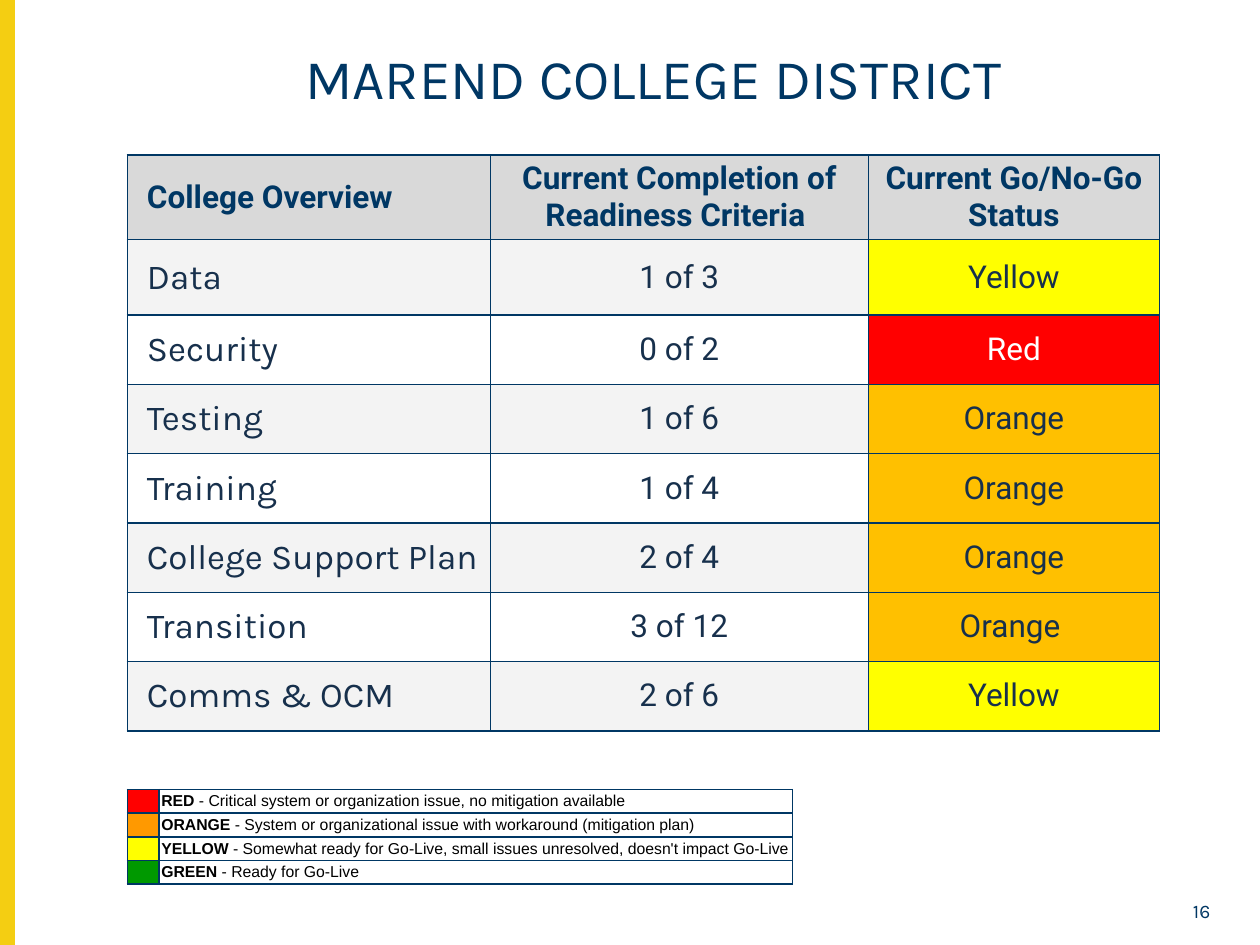
import pptx
import pptx.dml.color
import pptx.enum.shapes
import pptx.enum.text
import pptx.oxml
import pptx.oxml.ns
import pptx.util

Pt = pptx.util.Pt
ALIGN = pptx.enum.text.PP_ALIGN
MIDDLE = pptx.enum.text.MSO_ANCHOR.MIDDLE

NAVY = "003764"
INK = "17304C"
WHITE = "FFFFFF"
BAR_GOLD = "F4CE12"
HEADER_GREY = "D9D9D9"
BAND_GREY = "F3F3F3"
LEFT = 72.8

HEADINGS = (
    "College Overview",
    "Current Completion of Readiness Criteria ",
    "Current Go/No-Go Status",
)
STATUS_FILLS = {"Yellow": "FFFF00", "Red": "FF0000", "Orange": "FFC000"}
READINESS = (
    ("Data", "1 of 3", "Yellow"),
    ("Security", "0 of 2", "Red"),
    ("Testing", "1 of 6", "Orange"),
    ("Training", "1 of 4", "Orange"),
    ("College Support Plan", "2 of 4", "Orange"),
    ("Transition", "3 of 12", "Orange "),
    ("Comms & OCM", "2 of 6", "Yellow"),
)
LEGEND = (
    ("RED", "FF0000", "Critical system or organization issue, no mitigation available"),
    ("ORANGE", "FF9900", "System or organizational issue with workaround (mitigation plan)"),
    ("YELLOW", "FFFF00",
     "Somewhat ready for Go-Live, small issues unresolved, doesn't impact Go-Live"),
    ("GREEN", "009900", "Ready for Go-Live"),
)


def color(hex_string):
    return pptx.dml.color.RGBColor.from_string(hex_string)


def add_text(paragraph, text, *, size, font, fill, bold=False, align=None, indent=0):
    """Append a formatted run; indent is the first-line indent in points."""
    run = paragraph.add_run()
    run.text = text
    run.font.size = Pt(size)
    run.font.name = font
    run.font.bold = bold
    run.font.color.rgb = color(fill)
    if align is not None:
        paragraph.alignment = align
    if indent:
        paragraph._p.get_or_add_pPr().set("indent", str(Pt(indent)))


def add_text_box(slide, left, top, width, height, text, line_spacing=None, **text_format):
    frame = slide.shapes.add_textbox(Pt(left), Pt(top), Pt(width), Pt(height)).text_frame
    frame.word_wrap = True
    frame.vertical_anchor = MIDDLE
    paragraph = frame.paragraphs[0]
    if line_spacing:
        paragraph.line_spacing = line_spacing
    add_text(paragraph, text, **text_format)


def add_side_bar(slide):
    bar = slide.shapes.add_shape(
        pptx.enum.shapes.MSO_SHAPE.RECTANGLE, Pt(0), Pt(0), Pt(8), Pt(540))
    bar.shadow.inherit = False
    bar.fill.solid()
    bar.fill.fore_color.rgb = color(BAR_GOLD)
    bar.line.color.rgb = color(BAR_GOLD)
    bar.line.width = Pt(1)


def add_grid(slide, left, top, widths, heights):
    """Add an unstyled table with the given column widths and row heights."""
    table = slide.shapes.add_table(
        len(heights), len(widths), Pt(left), Pt(top), Pt(sum(widths)), Pt(sum(heights))).table
    table.first_row = False
    table.horz_banding = False
    for column, width in zip(table.columns, widths):
        column.width = Pt(width)
    for row, height in zip(table.rows, heights):
        row.height = Pt(height)
    return table


def format_cell(cell, margins, fill=None):
    """Set borders, margins (left, top, right, bottom) and fill."""
    cell.vertical_anchor = MIDDLE
    cell.margin_left, cell.margin_top, cell.margin_right, cell.margin_bottom = map(Pt, margins)
    properties = cell._tc.get_or_add_tcPr()
    for side in ("lnL", "lnR", "lnT", "lnB"):
        properties.append(pptx.oxml.parse_xml(
            f'<a:{side} {pptx.oxml.ns.nsdecls("a")} w="{Pt(1)}"><a:solidFill>'
            f'<a:srgbClr val="{NAVY}"/></a:solidFill></a:{side}>'))
    if fill:
        cell.fill.solid()
        cell.fill.fore_color.rgb = color(fill)
    else:
        cell.fill.background()


def add_readiness_table(slide):
    heights = [48.2, 43.2] + [39.6] * (len(READINESS) - 1)
    table = add_grid(slide, LEFT, 88.7, [207.4, 216, 166.4], heights)
    for row, texts in enumerate((HEADINGS, *READINESS)):
        is_header = row == 0
        band = HEADER_GREY if is_header else (BAND_GREY if row % 2 else WHITE)
        for column, text in enumerate(texts):
            cell = table.cell(row, column)
            fill = STATUS_FILLS.get(text.strip(), band)
            format_cell(cell, (2.2, 1.4, 2.2, 1.4), fill)
            is_label = column == 0
            is_topic = is_label and not is_header
            ink = NAVY if is_header else (WHITE if text == "Red" else INK)
            add_text(cell.text_frame.paragraphs[0], text,
                     size=20 if is_topic else 18,
                     font="Karla" if is_topic else "Roboto",
                     fill=ink, bold=is_header,
                     align=ALIGN.LEFT if is_label else ALIGN.CENTER,
                     indent=9 if is_label else 0)


def add_legend(slide):
    table = add_grid(slide, LEFT, 451.2, [18, 362], [13.5] * len(LEGEND))
    for row, (name, fill, meaning) in enumerate(LEGEND):
        swatch, description = table.cell(row, 0), table.cell(row, 1)
        format_cell(swatch, (0, 0, 0, 0), fill)
        # A small end-of-paragraph size keeps the empty cell from stretching its row.
        swatch.text_frame.paragraphs[0]._p.append(pptx.oxml.parse_xml(
            f'<a:endParaRPr {pptx.oxml.ns.nsdecls("a")} sz="900"/>'))
        format_cell(description, (1.4, 0, 0, 0))
        paragraph = description.text_frame.paragraphs[0]
        for text, bold in ((name, True), (f" - {meaning}", False)):
            add_text(paragraph, text, size=9, font="Arial", fill="000000", bold=bold)


def main():
    presentation = pptx.Presentation()
    presentation.slide_width = Pt(720)
    presentation.slide_height = Pt(540)
    slide = presentation.slides.add_slide(presentation.slide_layouts[6])
    add_side_bar(slide)
    add_text_box(slide, LEFT, 22.6, 601.4, 48, "MAREND COLLEGE DISTRICT", line_spacing=0.9,
                 size=32, font="Karla", fill=NAVY, align=ALIGN.CENTER)
    add_readiness_table(slide)
    add_legend(slide)
    add_text_box(slide, 662, 511, 36.7, 18.7, "16",
                 size=11, font="Karla", fill=NAVY, align=ALIGN.RIGHT)
    presentation.save("out.pptx")


if __name__ == "__main__":
    main()
